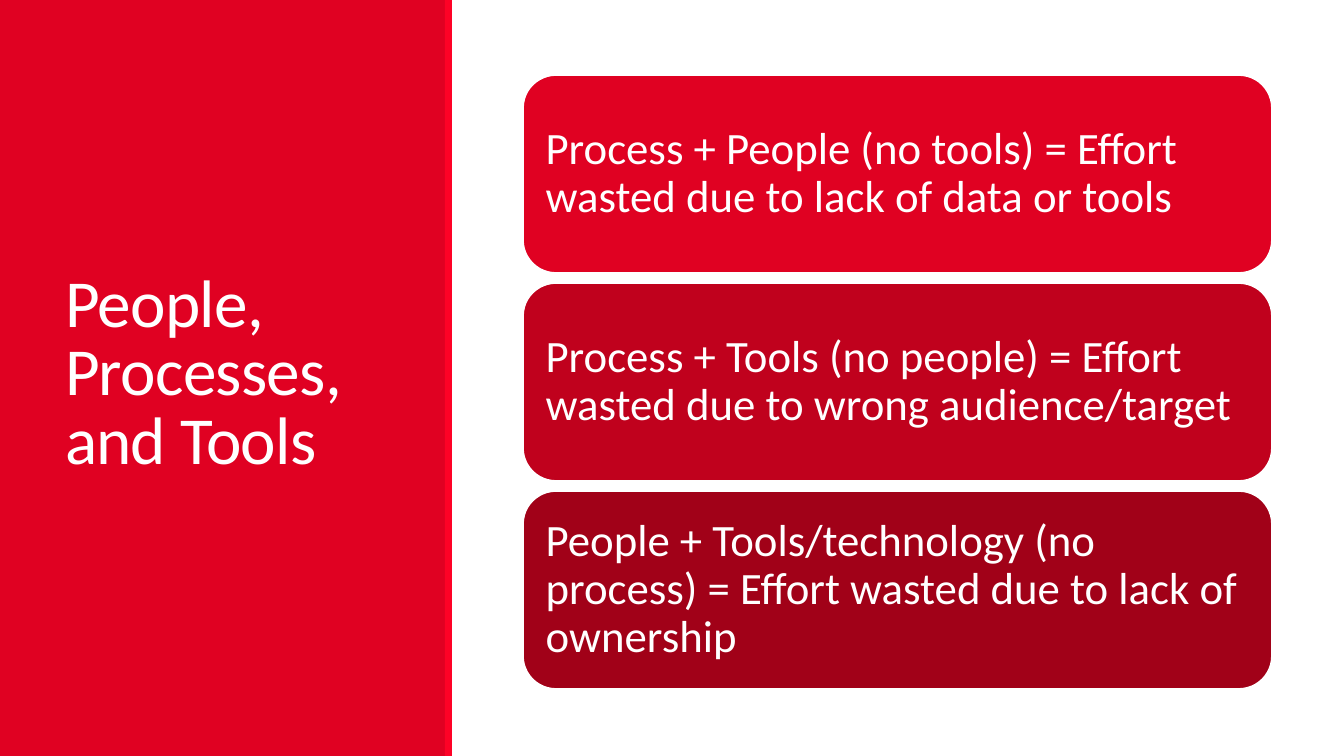
from pptx import Presentation
from pptx.dml.color import RGBColor
from pptx.enum.shapes import MSO_SHAPE
from pptx.enum.text import MSO_ANCHOR, PP_ALIGN
from pptx.util import Emu, Pt

WHITE = RGBColor(0xFF, 0xFF, 0xFF)
RED = RGBColor(0xE0, 0x01, 0x22)
BRIGHT = RGBColor(0xFE, 0x02, 0x26)
DEEP = RGBColor(0xC0, 0x01, 0x1D)
DARK = RGBColor(0xA1, 0x01, 0x18)

TITLE = "People, Processes, and Tools"
CARDS = [
    ("Process + People (no tools) = Effort wasted due to lack of data or tools", RED),
    ("Process + Tools (no people) = Effort wasted due to wrong audience/target", DEEP),
    ("People + Tools/technology (no process) = Effort wasted due to lack of ownership", DARK),
]
PANELS = [((0, 0, 447, 756), RED), ((445, 0, 7, 756), BRIGHT)]
WIDTH, HEIGHT = 1344, 756
LEFT, TOP, WIDE, HIGH, GAP = 523, 75, 749, 198, 10


def px(count):
    return Emu(round(count * 914400 / 100.8))


def block(slide, kind, box, color):
    shape = slide.shapes.add_shape(kind, *map(px, box))
    shape.shadow.inherit = False
    shape.fill.solid()
    shape.fill.fore_color.rgb = color
    shape.line.fill.background()
    return shape


def write(shape, text, size, inset, space):
    frame = shape.text_frame
    form = dict.fromkeys(
        ("margin_left", "margin_right", "margin_top", "margin_bottom"), px(inset))
    form |= {"word_wrap": True, "vertical_anchor": MSO_ANCHOR.MIDDLE}
    for name, value in form.items():
        setattr(frame, name, value)
    para = frame.paragraphs[0]
    para.alignment = PP_ALIGN.LEFT
    para.line_spacing = space
    run = para.add_run()
    run.text = text
    for name, value in {"name": "Calibri", "size": Pt(size)}.items():
        setattr(run.font, name, value)
    run.font.color.rgb = WHITE
    return run


def main():
    deck = Presentation()
    deck.slide_width, deck.slide_height = px(WIDTH), px(HEIGHT)
    slide = deck.slides.add_slide(deck.slide_layouts[6])
    for box, color in PANELS:
        block(slide, MSO_SHAPE.RECTANGLE, box, color)
    title = slide.shapes.add_textbox(*map(px, (55, 57, 340, 636)))
    run = write(title, TITLE, 48, 10, 0.85)
    run._r.get_or_add_rPr().set("spc", "-50")
    for row, (text, color) in enumerate(CARDS):
        box = (LEFT, TOP + row * (HIGH + GAP), WIDE, HIGH)
        card = block(slide, MSO_SHAPE.ROUNDED_RECTANGLE, box, color)
        card.line.color.rgb = WHITE
        card.line.width = Pt(1.25)
        write(card, text, 32, 13, 0.9)
    deck.save("out.pptx")


if __name__ == "__main__":
    main()
